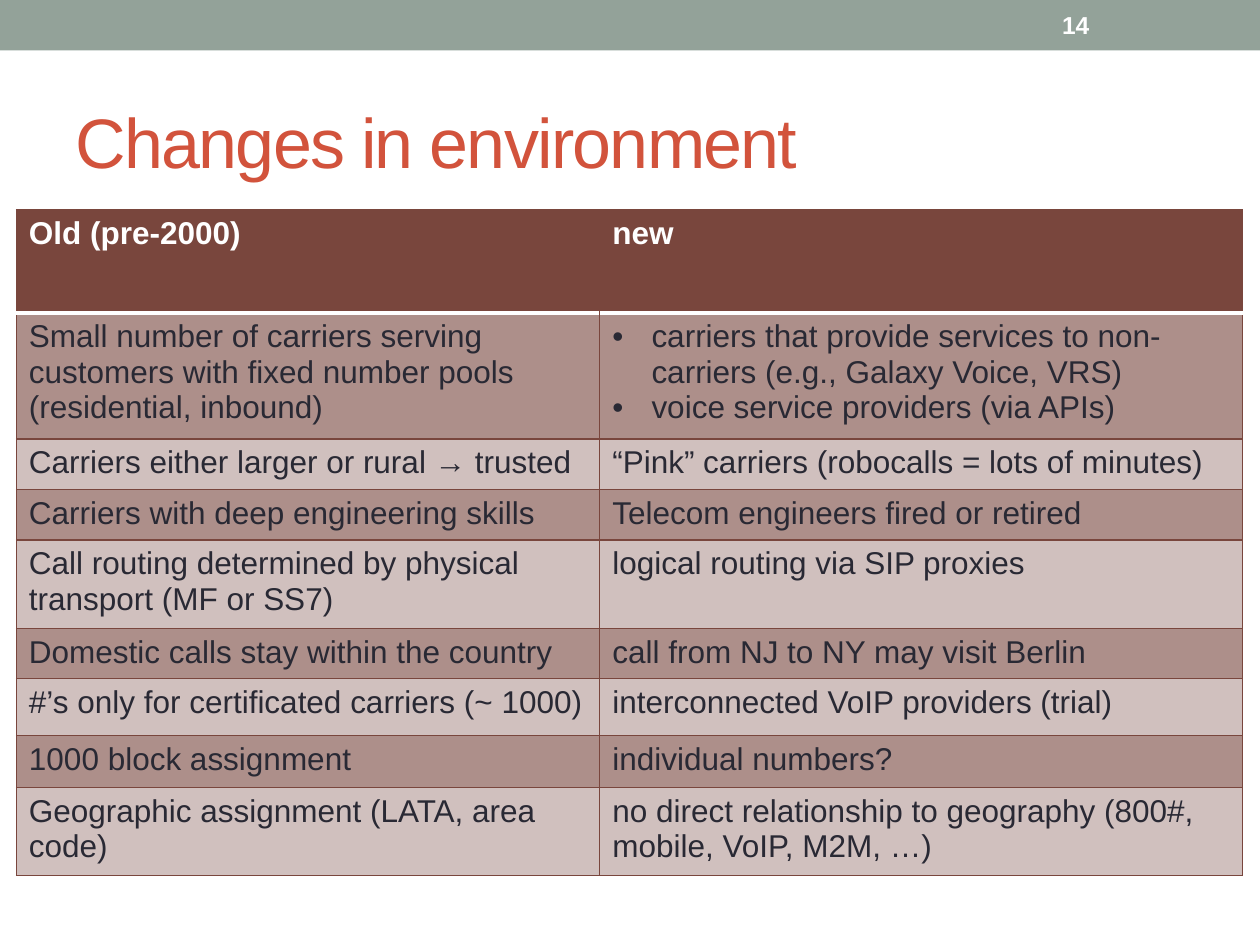
"""Build the slide that compares the old and new carrier environment."""
from lxml import etree
from pptx import Presentation
from pptx.dml.color import RGBColor
from pptx.enum.shapes import MSO_SHAPE
from pptx.enum.text import MSO_ANCHOR, MSO_AUTO_SIZE, PP_ALIGN
from pptx.oxml.ns import qn
from pptx.util import Cm, Pt

RECTANGLE = MSO_SHAPE.RECTANGLE
MIDDLE = MSO_ANCHOR.MIDDLE
NO_AUTOFIT = MSO_AUTO_SIZE.NONE
LEFT = PP_ALIGN.LEFT
TITLE_ONLY_LAYOUT = 5

SAGE = RGBColor(0x93, 0xA2, 0x99)
RED = RGBColor(0xD2, 0x53, 0x3C)
BROWN = RGBColor(0x79, 0x46, 0x3D)
DARK_BAND = RGBColor(0xAD, 0x8F, 0x8A)
LIGHT_BAND = RGBColor(0xD0, 0xC0, 0xBE)
INK = RGBColor(0x29, 0x29, 0x34)
WHITE = RGBColor(0xFF, 0xFF, 0xFF)

FONT = "Arial"
THIN, THICK = Pt(0.75), Pt(2.08)
COLUMN_WIDTHS = (11.76, 12.95)
CHANGES = [
    (2.08, "Old (pre-2000)", "new"),
    (2.38, "Small number of carriers serving customers with fixed number pools "
           "(residential, inbound)",
     ("carriers that provide services to non-carriers (e.g., Galaxy Voice, VRS)",
      "voice service providers (via APIs)")),
    (0.97, "Carriers either larger or rural → trusted",
     "“Pink” carriers (robocalls = lots of minutes)"),
    (0.97, "Carriers with deep engineering skills",
     "Telecom engineers fired or retired"),
    (1.67, "Call routing determined by physical transport (MF or SS7)",
     "logical routing via SIP proxies"),
    (0.97, "Domestic calls stay within the country",
     "call from NJ to NY may visit Berlin"),
    (1.14, "#’s only for certificated carriers (~ 1000)",
     "interconnected VoIP providers (trial)"),
    (1.05, "1000 block assignment", "individual numbers?"),
    (1.67, "Geographic assignment (LATA, area code)",
     "no direct relationship to geography (800#, mobile, VoIP, M2M, …)"),
]


def format_text(frame, size, color, bold=False):
    for paragraph in frame.paragraphs:
        paragraph.alignment = LEFT
        for run in paragraph.runs:
            run.font.name = FONT
            run.font.size = Pt(size)
            run.font.bold = bold
            run.font.color.rgb = color


def add_top_bar(slide, slide_width):
    bar = slide.shapes.add_shape(RECTANGLE, 0, 0, slide_width, Cm(1.02))
    bar.shadow.inherit = False
    bar.fill.solid()
    bar.fill.fore_color.rgb = SAGE
    bar.line.fill.background()


def add_title(slide, wording):
    title = slide.shapes.title
    title.left, title.top, title.width, title.height = (
        Cm(1.27), Cm(1.47), Cm(22.86), Cm(2.74))
    frame = title.text_frame
    frame.text = wording
    frame.auto_size = NO_AUTOFIT
    frame.vertical_anchor = MIDDLE
    format_text(frame, 40, RED)
    frame.paragraphs[0].runs[0].font._element.set("spc", "-100")


def add_slide_number(slide, number):
    frame = slide.shapes.add_textbox(
        Cm(21.16), Cm(0.05), Cm(2.97), Cm(0.91)).text_frame
    frame.text = number
    frame.word_wrap = True
    frame.vertical_anchor = MIDDLE
    format_text(frame, 14, WHITE, bold=True)


def add_bullet(paragraph):
    properties = paragraph._p.get_or_add_pPr()
    properties.set("marL", str(Cm(0.79)))
    properties.set("indent", str(-Cm(0.79)))
    font = etree.SubElement(properties, qn("a:buFont"))
    font.set("typeface", FONT)
    etree.SubElement(properties, qn("a:buChar")).set("char", "•")


def set_borders(cell, borders):
    properties = cell._tc.get_or_add_tcPr()
    for position, side in enumerate("LRTB"):
        color, width = borders[side]
        border = etree.Element(qn(f"a:ln{side}"), w=str(width))
        if color is None:
            etree.SubElement(border, qn("a:noFill"))
        else:
            fill = etree.SubElement(border, qn("a:solidFill"))
            etree.SubElement(fill, qn("a:srgbClr"), val=str(color))
        properties.insert(position, border)


def borders_for(row, column):
    borders = dict.fromkeys("LRTB", (BROWN, THIN))
    if row == 0:
        borders["B"] = (WHITE, THICK)
        borders["R" if column == 0 else "L"] = (None, THIN)
    elif row == 1:
        borders["T"] = (WHITE, THICK)
    return borders


def fill_cell(cell, content, row, column):
    frame = cell.text_frame
    if isinstance(content, tuple):
        frame.text = "\n".join(content)
        for paragraph in frame.paragraphs:
            add_bullet(paragraph)
    else:
        frame.text = content
    is_header = row == 0
    format_text(frame, 18, WHITE if is_header else INK, bold=is_header)
    cell.fill.solid()
    band = DARK_BAND if row % 2 else LIGHT_BAND
    cell.fill.fore_color.rgb = BROWN if is_header else band
    set_borders(cell, borders_for(row, column))


def add_comparison(slide):
    heights = [height for height, *_ in CHANGES]
    table = slide.shapes.add_table(
        len(CHANGES), len(COLUMN_WIDTHS), Cm(0.33), Cm(4.23),
        Cm(sum(COLUMN_WIDTHS)), Cm(sum(heights))).table
    for column, width in zip(table.columns, COLUMN_WIDTHS):
        column.width = Cm(width)
    for row, (height, *contents) in enumerate(CHANGES):
        table.rows[row].height = Cm(height)
        for column, content in enumerate(contents):
            fill_cell(table.cell(row, column), content, row, column)


def main():
    presentation = Presentation()
    presentation.slide_width, presentation.slide_height = Cm(25.4), Cm(19.05)
    slide = presentation.slides.add_slide(
        presentation.slide_layouts[TITLE_ONLY_LAYOUT])
    add_top_bar(slide, presentation.slide_width)
    add_title(slide, "Changes in environment")
    add_slide_number(slide, "14")
    add_comparison(slide)
    presentation.save("out.pptx")


if __name__ == "__main__":
    main()
